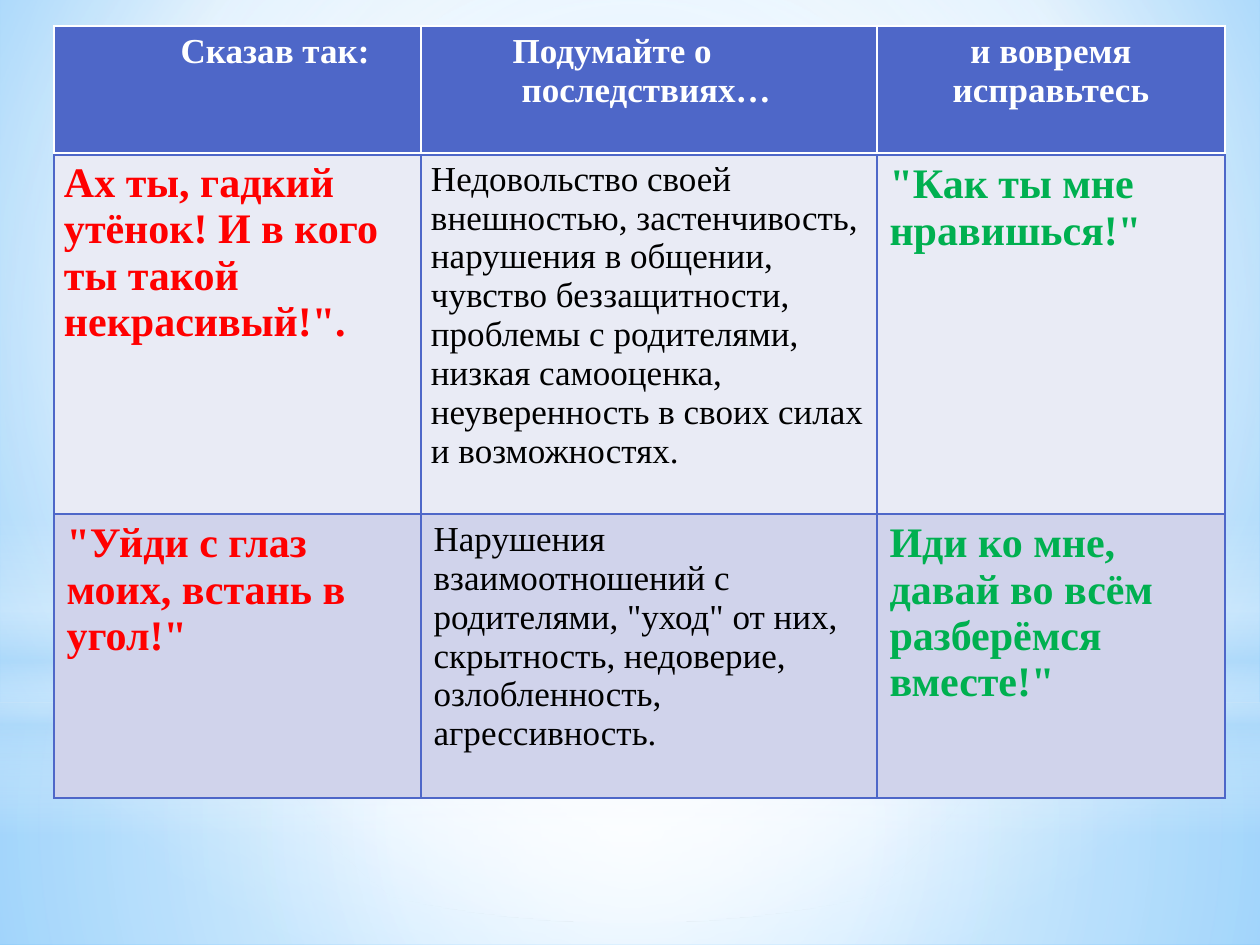
from lxml.etree import SubElement
from pptx import Presentation
from pptx.dml.color import RGBColor
from pptx.enum.shapes import MSO_SHAPE
from pptx.enum.text import PP_ALIGN
from pptx.oxml.ns import qn
from pptx.util import Pt

PX = 914400 // 126
FONT = "Times New Roman"
BLUE, WHITE, RED, GREEN, BLACK = "4E67C8", "FFFFFF", "FF0000", "00B050", "000000"
PALE, LILAC = "E9EBF5", "D0D3EB"
SKY = "B4DCFA"

# Gradient stops: position, colour, opacity (all but colour in percent)
BACKGROUND = [(0, "9ED5FF", 100), (60, WHITE, 100), (100, "5BB9FF", 100)]
CENTRE = (50, 50, 50, 50)
GLOWS = [  # preset, box in px, stops, focus (None for a vertical gradient)
    (MSO_SHAPE.RECTANGLE, (0, 703, 1260, 242),
     [(0, WHITE, 91), (37, WHITE, 76), (100, SKY, 79)], CENTRE),
    (MSO_SHAPE.RECTANGLE, (0, 0, 1260, 703),
     [(0, WHITE, 89), (48, WHITE, 62), (100, SKY, 79)], CENTRE),
    (MSO_SHAPE.RECTANGLE, (0, 519, 1260, 315),
     [(0, WHITE, 0), (29, WHITE, 30), (45, SKY, 40), (55, WHITE, 26),
      (65, SKY, 60), (100, WHITE, 0)], None),
    (MSO_SHAPE.OVAL, (0, 220, 1260, 703),
     [(0, WHITE, 100), (56, WHITE, 0)], CENTRE),
]

LEFT, COLUMNS = 54, (367, 456, 348)
# Header lines: text, left indent in px (None for centred)
HEADER = [
    [("Сказав так:", 114)],
    [("Подумайте о", 79), ("последствиях…", 88)],
    [("и вовремя исправьтесь", None)],
]
BODY = [
    ["Ах ты, гадкий утёнок! И в кого ты такой некрасивый!\".",
     "Недовольство своей внешностью, застенчивость, нарушения в общении, чувство "
     "беззащитности, проблемы с родителями, низкая самооценка, неуверенность в "
     "своих силах и возможностях.",
     "\"Как ты мне нравишься!\""],
    ["\"Уйди с глаз моих, встань в угол!\"",
     "Нарушения взаимоотношений с родителями, \"уход\" от них, скрытность, "
     "недоверие, озлобленность, агрессивность.",
     "Иди ко мне, давай во всём разберёмся вместе!\""],
]
BODY_STYLES = [(24, RED, True), (20, BLACK, False), (24, GREEN, True)]
BODY_FILLS = [PALE, LILAC]


def color(value):
    return RGBColor.from_string(value)


def add_gradient(element, stops, focus):
    """Replace the first solid fill inside element with a gradient."""
    solid = element.find(".//" + qn("a:solidFill"))
    gradient = solid.makeelement(qn("a:gradFill"), {"rotWithShape": "1"})
    stop_list = SubElement(gradient, qn("a:gsLst"))
    for position, value, opacity in stops:
        stop = SubElement(stop_list, qn("a:gs"), pos=str(position * 1000))
        tint = SubElement(stop, qn("a:srgbClr"), val=value)
        if opacity < 100:
            SubElement(tint, qn("a:alpha"), val=str(opacity * 1000))
    if focus:
        shade = SubElement(gradient, qn("a:path"), {"path": "circle"})
        sides = {side: str(part * 1000) for side, part in zip("ltrb", focus)}
        SubElement(shade, qn("a:fillToRect"), sides)
    else:
        SubElement(gradient, qn("a:lin"), ang="5400000", scaled="0")
    solid.getparent().replace(solid, gradient)


def add_table(slide, top, heights):
    box = (LEFT, top, sum(COLUMNS), sum(heights))
    frame = slide.shapes.add_table(len(heights), len(COLUMNS), *(n * PX for n in box))
    table = frame.table
    table.first_row = table.horz_banding = False
    for column, width in zip(table.columns, COLUMNS):
        column.width = width * PX
    for row, height in zip(table.rows, heights):
        row.height = height * PX
    return table


def style_cell(cell, fill, border, bottom=1):
    properties = cell._tc.get_or_add_tcPr()
    for side, width in zip("LRTB", (1, 1, 1, bottom)):
        line = SubElement(properties, qn("a:ln" + side), w=str(Pt(width)))
        paint = SubElement(line, qn("a:solidFill"))
        SubElement(paint, qn("a:srgbClr"), val=border)
    cell.fill.solid()
    cell.fill.fore_color.rgb = color(fill)


def style_text(cell, size, value, bold):
    for paragraph in cell.text_frame.paragraphs:
        for run in paragraph.runs:
            run.font.name, run.font.size, run.font.bold = FONT, Pt(size), bold
            run.font.color.rgb = color(value)


presentation = Presentation()
presentation.slide_width, presentation.slide_height = 1260 * PX, 945 * PX
slide = presentation.slides.add_slide(presentation.slide_layouts[6])

# Background and soft glows
slide.background.fill.solid()
slide.background.fill.fore_color.rgb = color(WHITE)
add_gradient(slide.element, BACKGROUND, (20, 10, 20, 60))
for preset, box, stops, focus in GLOWS:
    shape = slide.shapes.add_shape(preset, *(n * PX for n in box))
    shape.shadow.inherit = False
    shape.fill.solid()
    shape.fill.fore_color.rgb = color(WHITE)
    shape.line.fill.background()
    add_gradient(shape.element, stops, focus)

# Header table
header = add_table(slide, 26, [128])
for cell, lines in zip(header.rows[0].cells, HEADER):
    style_cell(cell, BLUE, WHITE, bottom=3)
    cell.text_frame.text = "\n".join(text for text, _ in lines)
    for paragraph, (_, indent) in zip(cell.text_frame.paragraphs, lines):
        if indent is None:
            paragraph.alignment = PP_ALIGN.CENTER
        else:
            paragraph._p.get_or_add_pPr().set("marL", str(indent * PX))
    style_text(cell, 20, WHITE, True)

# Phrases table
body = add_table(slide, 155, [359, 284])
for row, texts, fill in zip(body.rows, BODY, BODY_FILLS):
    for cell, text, style in zip(row.cells, texts, BODY_STYLES):
        style_cell(cell, fill, BLUE)
        cell.text_frame.text = text
        style_text(cell, *style)
for cell in (body.cell(0, 0), body.cell(0, 1)):
    cell.margin_left = cell.margin_right = 10 * PX
    cell.margin_top = cell.margin_bottom = 5 * PX

presentation.save("out.pptx")
